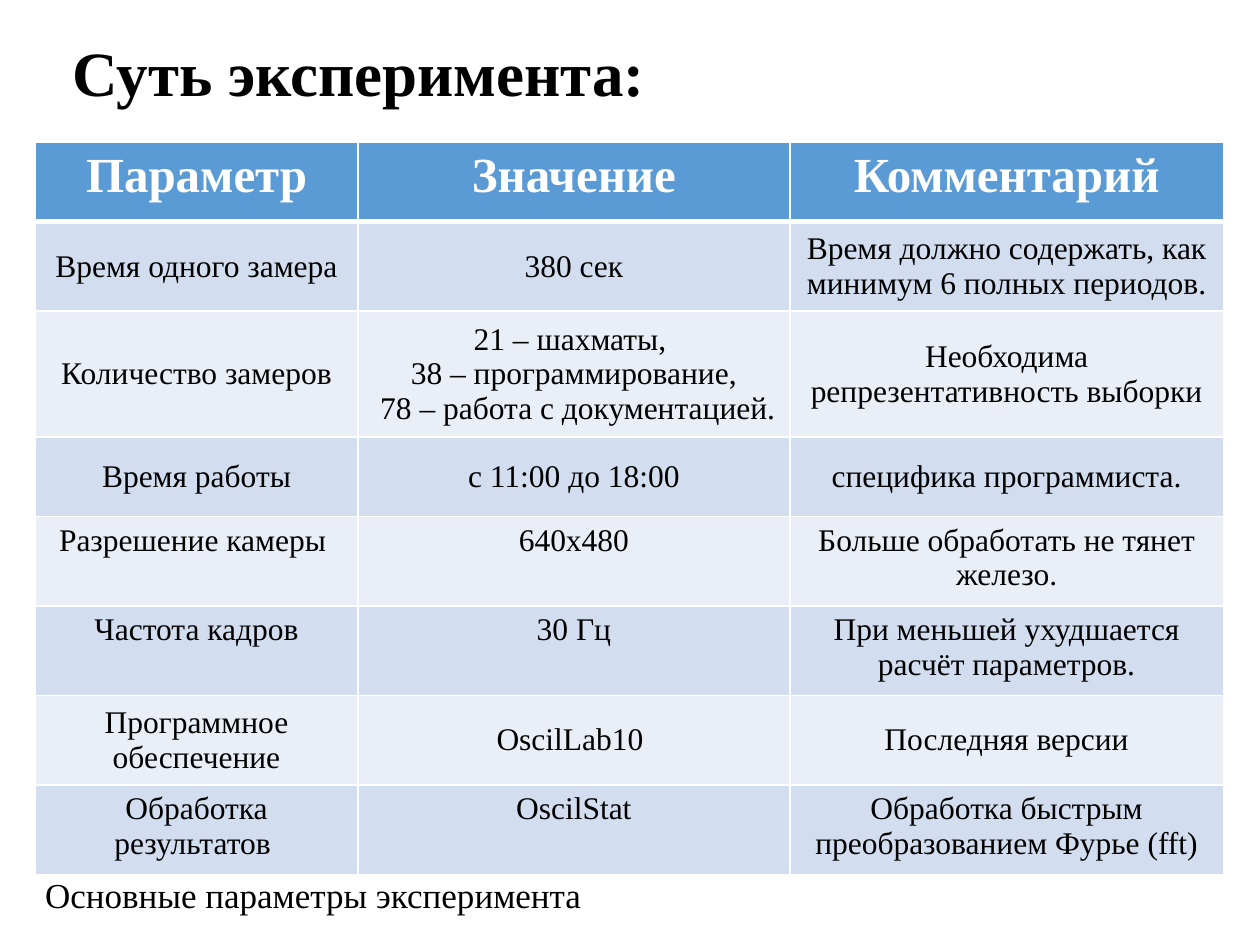
from lxml import etree
from pptx import Presentation
from pptx.dml.color import RGBColor
from pptx.enum import text
from pptx.oxml import ns
from pptx.util import Inches, Pt

FONT = "Times New Roman"
BLACK = RGBColor(0x00, 0x00, 0x00)
WHITE = RGBColor(0xFF, 0xFF, 0xFF)
HEADER_BLUE = RGBColor(0x5B, 0x9B, 0xD5)
BANDS = (RGBColor(0xD2, 0xDE, 0xEF), RGBColor(0xEA, 0xEF, 0xF7))
TOP, MIDDLE = text.MSO_ANCHOR.TOP, text.MSO_ANCHOR.MIDDLE

COLUMN_WIDTHS = (2.56, 3.43, 3.44)
HEADER = ("Параметр", "Значение", "Комментарий")
# Row height, vertical anchor, cell texts (a line break starts a paragraph)
ROWS = (
    (0.71, MIDDLE, ("Время одного замера", "380 сек",
                    "Время должно содержать, как минимум 6 полных периодов.")),
    (0.71, MIDDLE, ("Количество замеров",
                    "21 – шахматы, \n38 – программирование,\n 78 – работа с документацией.",
                    "Необходима репрезентативность выборки")),
    (0.63, MIDDLE, ("Время работы", "с 11:00 до 18:00", "специфика программиста.")),
    (0.71, TOP, ("Разрешение камеры ", "640x480", "Больше обработать не тянет железо.")),
    (0.71, TOP, ("Частота кадров", "30 Гц", "При меньшей ухудшается расчёт параметров.")),
    (0.71, MIDDLE, ("Программное обеспечение", "OscilLab10 ", "Последняя версии")),
    (0.71, TOP, ("Обработка результатов ", "OscilStat",
                 "Обработка быстрым преобразованием Фурье (fft)")),
)


def add_span(para, words, size, color=BLACK, bold=False):
    span = para.add_run()
    span.text = words
    span.font.name = FONT
    span.font.size = Pt(size)
    span.font.bold = bold
    span.font.color.rgb = color


def add_text(page, place, words, size, bold=False, anchor=TOP, spacing=None):
    box = page.shapes.add_textbox(*(Inches(length) for length in place))
    frame = box.text_frame
    frame.word_wrap = True
    frame.vertical_anchor = anchor
    para = frame.paragraphs[0]
    para.line_spacing = spacing
    add_span(para, words, size, bold=bold)


def set_borders(cell, bottom=1, top=1):
    """Draw white cell borders; they must precede the fill."""
    properties = cell._tc.get_or_add_tcPr()
    widths = {"lnL": 1, "lnR": 1, "lnT": top, "lnB": bottom}
    for side, width in widths.items():
        line = etree.SubElement(properties, ns.qn("a:" + side), w=str(Pt(width)))
        fill = etree.SubElement(line, ns.qn("a:solidFill"))
        etree.SubElement(fill, ns.qn("a:srgbClr"), val=str(WHITE))


def fill_cell(cell, words, fill, anchor, size=18, color=BLACK, bold=False):
    cell.fill.solid()
    cell.fill.fore_color.rgb = fill
    cell.vertical_anchor = anchor
    frame = cell.text_frame
    for index, line in enumerate(words.split("\n")):
        para = frame.add_paragraph() if index else frame.paragraphs[0]
        para.alignment = text.PP_ALIGN.CENTER
        add_span(para, line, size, color, bold)


def add_parameter_table(page):
    heights = [0.63] + [row[0] for row in ROWS]
    table = page.shapes.add_table(
        len(heights), len(COLUMN_WIDTHS), Inches(0.28), Inches(1.13),
        Inches(sum(COLUMN_WIDTHS)), Inches(sum(heights))).table
    for column, width in zip(table.columns, COLUMN_WIDTHS):
        column.width = Inches(width)
    for row, height in zip(table.rows, heights):
        row.height = Inches(height)

    # Header row
    for cell, words in zip(table.rows[0].cells, HEADER):
        set_borders(cell, bottom=3)
        fill_cell(cell, words, HEADER_BLUE, TOP, 28, WHITE, True)

    # Banded body rows
    for number, (_, anchor, texts) in enumerate(ROWS):
        for cell, words in zip(table.rows[number + 1].cells, texts):
            set_borders(cell, top=1 if number else 3)
            fill_cell(cell, words, BANDS[number % 2], anchor)


def main():
    deck = Presentation()
    deck.slide_width, deck.slide_height = Inches(10), Inches(7.5)
    page = deck.slides.add_slide(deck.slide_layouts[6])
    # Title, table and caption
    add_text(page, (0.48, 0.24, 8.62, 0.73), "Суть эксперимента:", 36,
             bold=True, anchor=MIDDLE, spacing=0.9)
    add_parameter_table(page)
    add_text(page, (0.26, 6.88, 9.07, 0.44), "Основные параметры эксперимента", 20)
    deck.save("out.pptx")


if __name__ == "__main__":
    main()
